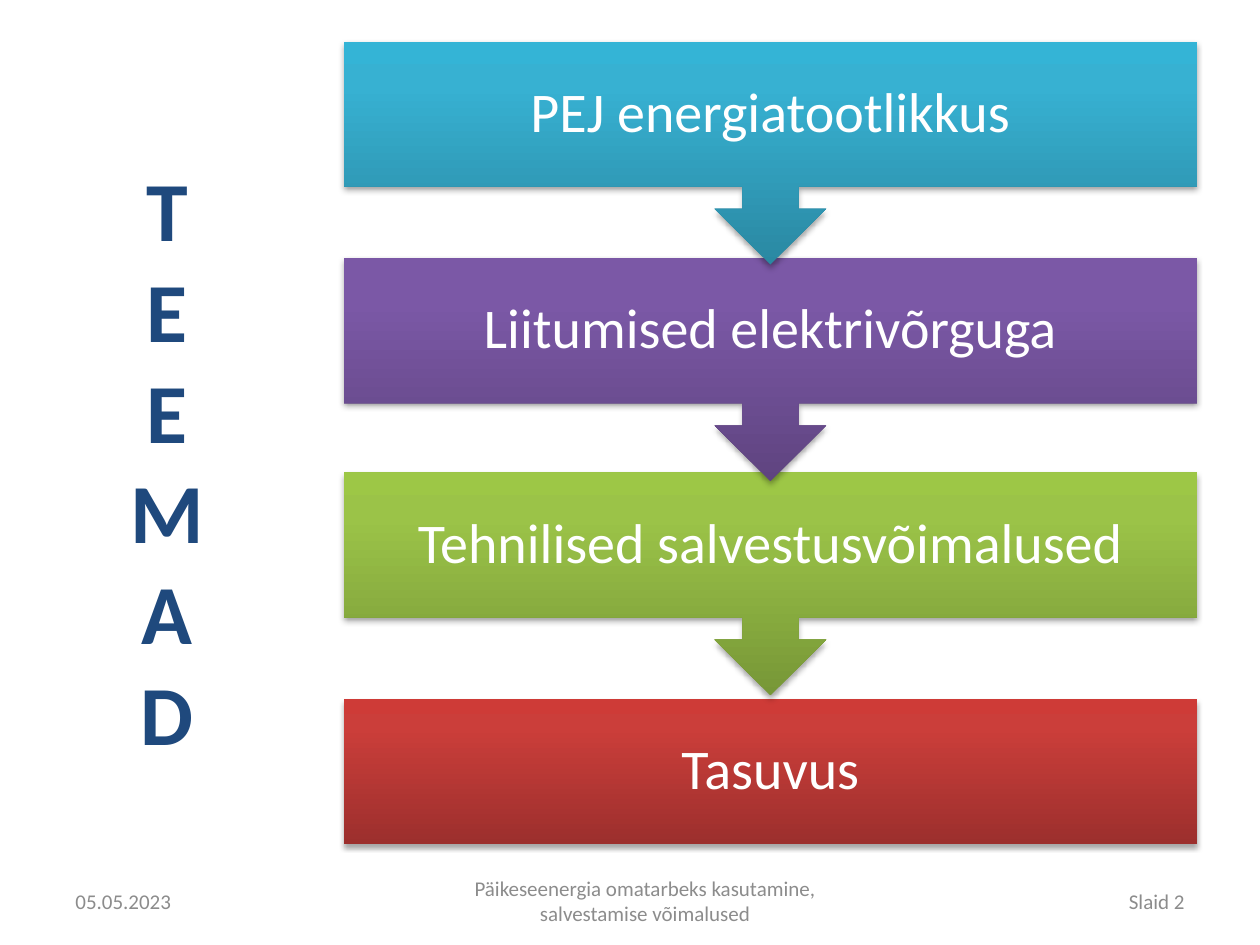
from copy import deepcopy
from dataclasses import dataclass

from lxml import etree
from pptx import Presentation
from pptx.dml.color import RGBColor
from pptx.enum.shapes import MSO_SHAPE
from pptx.enum.text import MSO_ANCHOR, MSO_AUTO_SIZE, PP_ALIGN
from pptx.oxml.ns import qn
from pptx.shapes.autoshape import Shape
from pptx.slide import Slide
from pptx.text.text import TextFrame
from pptx.util import Pt

BOX, ARROW_BOX = MSO_SHAPE.RECTANGLE, MSO_SHAPE.DOWN_ARROW_CALLOUT
LEFT, CENTER, RIGHT = PP_ALIGN.LEFT, PP_ALIGN.CENTER, PP_ALIGN.RIGHT
MIDDLE, BOTTOM = MSO_ANCHOR.MIDDLE, MSO_ANCHOR.BOTTOM


@dataclass(frozen=True)
class Theme:
    font: str = "Calibri"
    title_color: str = "1F497D"
    topic_color: str = "FFFFFF"
    footer_color: str = "8C8C8C"
    shadow_color: str = "000000"
    title_size: int = 48
    topic_size: int = 32
    footer_size: int = 12


@dataclass(frozen=True)
class Topic:
    label: str
    top: float
    gradient: tuple[str, str, str]  # bottom to top


@dataclass(frozen=True)
class FooterItem:
    text: str
    left: float
    width: float
    align: PP_ALIGN


THEME = Theme()
TOPIC_LEFT, TOPIC_WIDTH = 196.56, 487.44
BOX_HEIGHT, ARROW_BOX_HEIGHT = 82.8, 127.44
TOPIC_INSET = 18
GRADIENT_POSITIONS = (0, 0.8, 1)
FOOTER_TOP, FOOTER_HEIGHT = 500.4, 28.8

TOPICS = (
    Topic("PEJ energiatootlikkus", 23.76, ("2A88A2", "37B1D2", "34B4D6")),
    Topic("Liitumised elektrivõrguga", 147.6, ("5F4480", "7B58A6", "7C57A8")),
    Topic("Tehnilised salvestusvõimalused", 270, ("779737", "9BC348", "9DC746")),
    Topic("Tasuvus", 399.6, ("9C2F2D", "CB3E3A", "CE3B37")),
)
FOOTER = (
    FooterItem("05.05.2023", 36, 168, LEFT),
    FooterItem("Päikeseenergia omatarbeks kasutamine,\vsalvestamise võimalused",
               129.6, 478, CENTER),
    FooterItem("Slaid 2", 516, 168, RIGHT),
)


def write(frame: TextFrame, text: str, size: int, color: str, align: PP_ALIGN,
          anchor: MSO_ANCHOR = MIDDLE, bold: bool = False) -> None:
    frame.text = text
    frame.word_wrap = True
    frame.auto_size = MSO_AUTO_SIZE.NONE
    frame.vertical_anchor = anchor
    for paragraph in frame.paragraphs:
        paragraph.alignment = align
        for run in paragraph.runs:
            run.font.name = THEME.font
            run.font.size = Pt(size)
            run.font.bold = bold
            run.font.color.rgb = RGBColor.from_string(color)


def fill_gradient(shape: Shape, colors: tuple[str, str, str]) -> None:
    shape.fill.gradient()
    shape.fill.gradient_angle = 90
    stop_list = shape.element.spPr.find(qn("a:gradFill")).find(qn("a:gsLst"))
    stop_list.append(deepcopy(stop_list[-1]))
    for stop, color, position in zip(shape.fill.gradient_stops, colors, GRADIENT_POSITIONS):
        stop.color.rgb = RGBColor.from_string(color)
        stop.position = position


def add_shadow(shape: Shape) -> None:
    """Give the shape a soft shadow that falls straight down."""
    shape.shadow.inherit = False
    effects = shape.element.spPr.find(qn("a:effectLst"))
    shadow = etree.SubElement(effects, qn("a:outerShdw"), blurRad=str(Pt(3.1)),
                              dist=str(Pt(1.8)), dir="5400000", rotWithShape="0")
    color = etree.SubElement(shadow, qn("a:srgbClr"), val=THEME.shadow_color)
    etree.SubElement(color, qn("a:alpha"), val="35000")


def add_title(slide: Slide, text: str) -> None:
    title = slide.shapes.title
    title.left, title.top, title.width, title.height = Pt(44.64), Pt(67.68), Pt(101.52), Pt(371.52)
    write(title.text_frame, "\v".join(text), THEME.title_size, THEME.title_color,
          CENTER, BOTTOM, bold=True)


def add_topic(slide: Slide, topic: Topic, is_last: bool) -> None:
    kind, height = (BOX, BOX_HEIGHT) if is_last else (ARROW_BOX, ARROW_BOX_HEIGHT)
    shape = slide.shapes.add_shape(kind, Pt(TOPIC_LEFT), Pt(topic.top),
                                   Pt(TOPIC_WIDTH), Pt(height))
    fill_gradient(shape, topic.gradient)
    shape.line.fill.background()
    add_shadow(shape)
    frame = shape.text_frame
    frame.margin_left = frame.margin_right = Pt(TOPIC_INSET)
    frame.margin_top = frame.margin_bottom = Pt(TOPIC_INSET)
    write(frame, topic.label, THEME.topic_size, THEME.topic_color, CENTER)
    frame.paragraphs[0].line_spacing = 0.9


def add_footer_item(slide: Slide, item: FooterItem) -> None:
    box = slide.shapes.add_textbox(Pt(item.left), Pt(FOOTER_TOP),
                                   Pt(item.width), Pt(FOOTER_HEIGHT))
    write(box.text_frame, item.text, THEME.footer_size, THEME.footer_color, item.align)


def main() -> None:
    deck = Presentation()
    deck.slide_width, deck.slide_height = Pt(720), Pt(540)
    title_only = deck.slide_layouts[5]
    slide = deck.slides.add_slide(title_only)
    add_title(slide, "TEEMAD")
    # The lowest topic goes first so that each arrow overlaps the box below it.
    for topic in reversed(TOPICS):
        add_topic(slide, topic, is_last=topic is TOPICS[-1])
    for item in FOOTER:
        add_footer_item(slide, item)
    deck.save("out.pptx")


if __name__ == "__main__":
    main()
